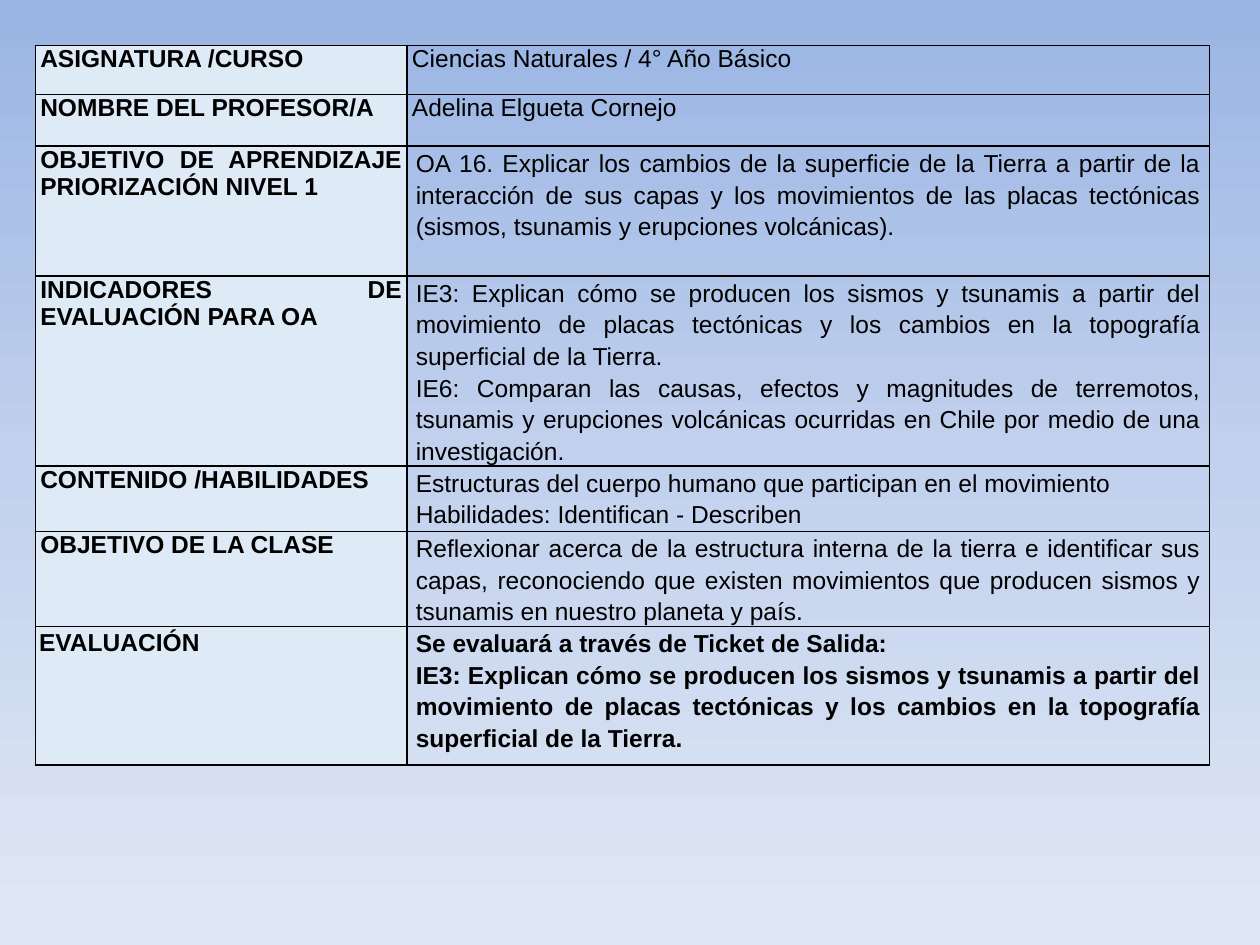
from copy import deepcopy
from dataclasses import dataclass

from lxml import etree
from pptx import Presentation
from pptx.dml.color import RGBColor
from pptx.enum.text import PP_ALIGN
from pptx.oxml.ns import qn
from pptx.util import Inches, Pt

JUSTIFY = PP_ALIGN.JUSTIFY
BLANK_LAYOUT = 6


@dataclass(frozen=True)
class Theme:
    font: str = "Arial"
    size: int = 14
    text: str = "000000"
    border: str = "000000"
    border_width: int = 1
    label_fill: str = "DEEAF6"
    background: tuple = ("9AB5E4", "C2D1ED", "E1E8F5")


THEME = Theme()

# Cell margins in inches: horizontal, vertical
TIGHT = (0.04, 0)
WIDE = (0.07, 0)
PADDED = (0.03, 0.02)

COLUMN_WIDTHS = (2.95, 6.37)
INDICATOR = (
    "IE3: Explican cómo se producen los sismos y tsunamis a partir del movimiento "
    "de placas tectónicas y los cambios en la topografía superficial de la Tierra."
)

# Row height, label, paragraphs of the answer
ROWS = (
    (0.39, "ASIGNATURA /CURSO", ["Ciencias Naturales / 4° Año Básico"]),
    (0.41, "NOMBRE DEL PROFESOR/A", ["Adelina Elgueta Cornejo"]),
    (1.03, "OBJETIVO DE APRENDIZAJE PRIORIZACIÓN NIVEL 1", [
        "OA 16. Explicar los cambios de la superficie de la Tierra a partir de la "
        "interacción de sus capas y los movimientos de las placas tectónicas "
        "(sismos, tsunamis y erupciones volcánicas)."]),
    (0.92, "INDICADORES DE EVALUACIÓN PARA OA", [
        INDICATOR,
        "IE6: Comparan las causas, efectos y magnitudes de terremotos, tsunamis y "
        "erupciones volcánicas ocurridas en Chile por medio de una investigación."]),
    (0.52, "CONTENIDO /HABILIDADES", [
        "Estructuras del cuerpo humano que participan en el movimiento",
        "Habilidades: Identifican - Describen"]),
    (0.67, "OBJETIVO DE LA CLASE", [
        "Reflexionar acerca de la estructura interna de la tierra e identificar sus "
        "capas, reconociendo que existen movimientos que producen sismos y tsunamis "
        "en nuestro planeta y país."]),
    (1.1, "EVALUACIÓN", ["Se evaluará a través de Ticket de Salida:", INDICATOR]),
)


def paint_background(page):
    """Vertical gradient with evenly spaced stops."""
    fill = page.background.fill
    fill.gradient()
    fill.gradient_angle = 270
    stop_list = page.element.find(".//" + qn("a:gsLst"))
    stop_list.insert(1, deepcopy(stop_list[0]))
    for index, (stop, color) in enumerate(zip(fill.gradient_stops, THEME.background)):
        stop.position = index / (len(THEME.background) - 1)
        stop.color.rgb = RGBColor.from_string(color)


def add_borders(cell):
    properties = cell._tc.get_or_add_tcPr()
    for index, side in enumerate(("lnL", "lnR", "lnT", "lnB")):
        line = etree.Element(qn(f"a:{side}"), w=str(Pt(THEME.border_width)))
        solid = etree.SubElement(line, qn("a:solidFill"))
        etree.SubElement(solid, qn("a:srgbClr"), val=THEME.border)
        properties.insert(index, line)


def fill_cell(cell, texts, margins, bold=False, fill=None, spacing=None):
    cell.margin_left = cell.margin_right = Inches(margins[0])
    cell.margin_top = cell.margin_bottom = Inches(margins[1])
    if fill:
        cell.fill.solid()
        cell.fill.fore_color.rgb = RGBColor.from_string(fill)
    else:
        cell.fill.background()
    add_borders(cell)

    cell.text_frame.text = "\n".join(texts)
    for paragraph in cell.text_frame.paragraphs:
        paragraph.alignment = JUSTIFY
        paragraph.line_spacing = spacing
        font = paragraph.font
        font.name, font.size, font.bold = THEME.font, Pt(THEME.size), bold
        font.color.rgb = RGBColor.from_string(THEME.text)


def add_plan_table(page):
    height = sum(row[0] for row in ROWS)
    frame = page.shapes.add_table(
        len(ROWS), len(COLUMN_WIDTHS), Inches(0.28), Inches(0.36),
        Inches(sum(COLUMN_WIDTHS)), Inches(height))
    table = frame.table
    table.first_row = table.horz_banding = False
    for column, width in zip(table.columns, COLUMN_WIDTHS):
        column.width = Inches(width)

    last = len(ROWS) - 1
    for index, (row_height, label, answer) in enumerate(ROWS):
        table.rows[index].height = Inches(row_height)
        fill_cell(table.cell(index, 0), [label], PADDED if index == last else TIGHT,
                  bold=True, fill=THEME.label_fill)
        # The first two answers are short, single-spaced lines
        short = index < 2
        fill_cell(table.cell(index, 1), answer, TIGHT if short else WIDE,
                  bold=index == last, spacing=None if short else 1.15)


def main():
    deck = Presentation()
    deck.slide_width, deck.slide_height = Inches(10), Inches(7.5)
    page = deck.slides.add_slide(deck.slide_layouts[BLANK_LAYOUT])
    paint_background(page)
    add_plan_table(page)
    deck.save("out.pptx")


if __name__ == "__main__":
    main()
